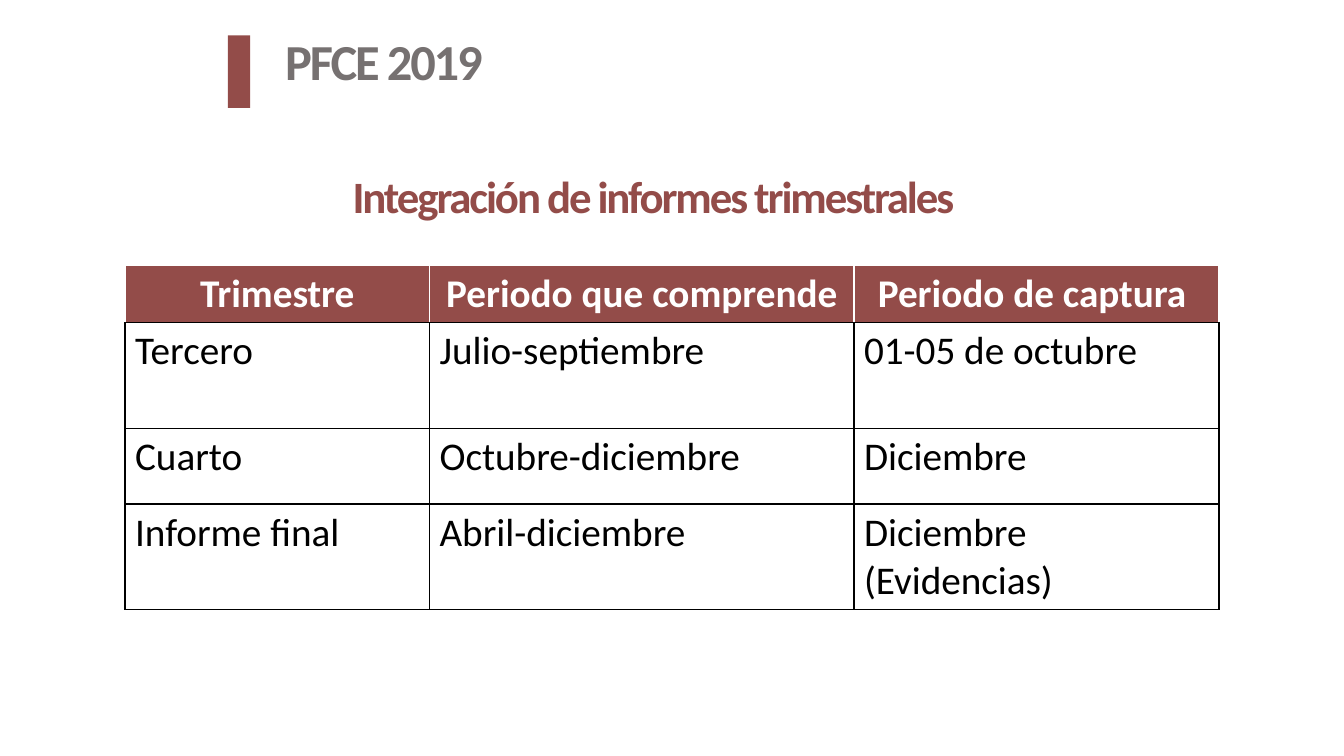
from pptx import Presentation
from pptx.dml.color import RGBColor
from pptx.enum.shapes import MSO_SHAPE
from pptx.enum.text import MSO_ANCHOR, PP_ALIGN
from pptx.oxml import parse_xml
from pptx.oxml.ns import nsdecls
from pptx.util import Pt

PX = 9144  # 100 px to the inch
COLORS = {"wine": "934C49", "gray": "767171", "white": "FFFFFF", "black": "000000"}


def write(frame, text, size=28, color="black", bold=False, align=PP_ALIGN.LEFT, spacing=0):
    """Put one formatted run in the frame; spacing is in hundredths of a point."""
    para = frame.paragraphs[0]
    para.alignment = align
    span = para.add_run()
    span.text = text
    span.font.name = "Calibri"
    span.font.size = Pt(size)
    span.font.bold = bold
    span.font.color.rgb = RGBColor.from_string(COLORS[color])
    if spacing:
        span.font._element.set("spc", str(spacing))


def set_borders(cell, **sides):
    """Draw 1 pt cell borders; sides must come in the order L, R, T, B."""
    properties = cell._tc.get_or_add_tcPr()
    for position, (side, color) in enumerate(sides.items()):
        properties.insert(position, parse_xml(
            f'<a:ln{side} {nsdecls("a")} w="12700"><a:solidFill>'
            f'<a:srgbClr val="{COLORS[color]}"/></a:solidFill></a:ln{side}>'))


deck = Presentation()
deck.slide_width, deck.slide_height = 1333 * PX, 750 * PX
page = deck.slides.add_slide(deck.slide_layouts[6])

# Heading
marker = page.shapes.add_shape(MSO_SHAPE.RECTANGLE, 226 * PX, 35 * PX, 22 * PX, 72 * PX)
marker.shadow.inherit = False
marker.fill.solid()
marker.fill.fore_color.rgb = RGBColor.from_string(COLORS["wine"])
marker.line.fill.background()

heading = page.shapes.add_textbox(273 * PX, -3 * PX, 844 * PX, 125 * PX).text_frame
heading.word_wrap = True
heading.vertical_anchor = MSO_ANCHOR.MIDDLE
write(heading, "PFCE 2019", size=36, color="gray", bold=True, spacing=-150)

subtitle = page.shapes.add_textbox(202 * PX, 162 * PX, 900 * PX, 71 * PX).text_frame
subtitle.word_wrap = True
write(subtitle, "Integración de informes trimestrales ", size=32, color="wine",
      bold=True, align=PP_ALIGN.CENTER, spacing=-150)

# Report calendar
REPORTS = [
    ("Trimestre", "Periodo que comprende", "Periodo de captura "),
    ("Tercero", "Julio-septiembre", "01-05 de octubre"),
    ("Cuarto", "Octubre-diciembre", "Diciembre"),
    ("Informe final", "Abril-diciembre", "Diciembre (Evidencias)"),
]
WIDTHS = [302, 421, 362]
HEIGHTS = [57, 105, 75, 105]

calendar = page.shapes.add_table(len(REPORTS), len(WIDTHS), 124 * PX, 263 * PX,
                                 sum(WIDTHS) * PX, sum(HEIGHTS) * PX).table
for column, width in zip(calendar.columns, WIDTHS):
    column.width = width * PX
for row, height in zip(calendar.rows, HEIGHTS):
    row.height = height * PX

for row_index, report in enumerate(REPORTS):
    for column_index, text in enumerate(report):
        cell = calendar.cell(row_index, column_index)
        if row_index == 0:
            cell.fill.solid()
            cell.fill.fore_color.rgb = RGBColor.from_string(COLORS["wine"])
            set_borders(cell, L="white", R="white", T="white", B="black")
            write(cell.text_frame, text, color="white", bold=True, align=PP_ALIGN.CENTER)
        else:
            cell.fill.background()
            set_borders(cell, L="black", R="black", T="black", B="black")
            write(cell.text_frame, text)

deck.save("out.pptx")
